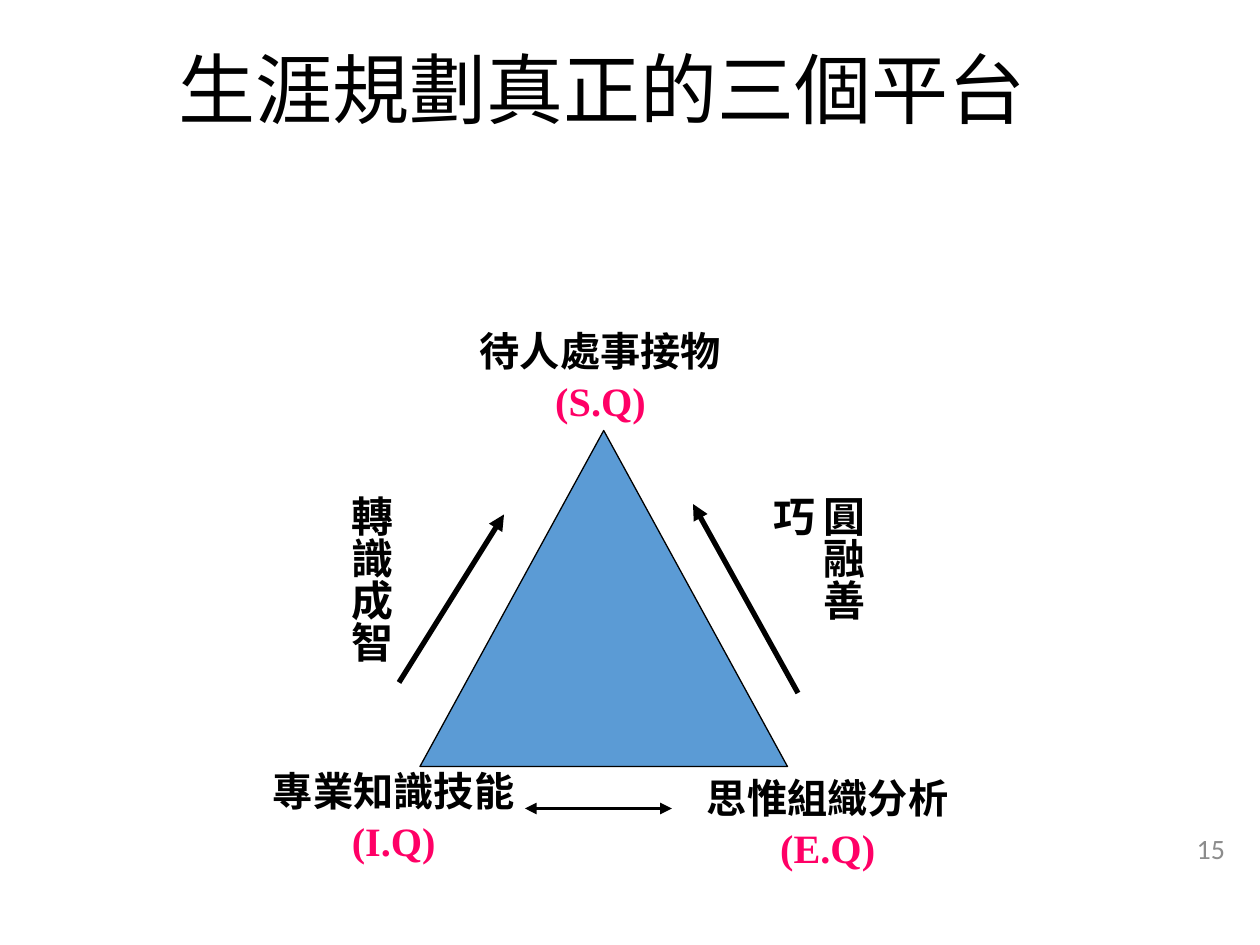
"""Build the slide showing the three platforms of career planning as a triangle."""
from dataclasses import dataclass
from typing import NamedTuple

from lxml.etree import SubElement
from pptx import Presentation
from pptx.dml.color import RGBColor
from pptx.enum.shapes import MSO_CONNECTOR as CONN, MSO_SHAPE as SHAPE
from pptx.enum.text import MSO_ANCHOR as ANCHOR, MSO_AUTO_SIZE as FIT, PP_ALIGN as ALIGN
from pptx.oxml.ns import qn
from pptx.util import Inches, Pt


@dataclass(frozen=True)
class Theme:
    black: RGBColor = RGBColor(0x00, 0x00, 0x00)
    pink: RGBColor = RGBColor(0xFF, 0x00, 0x66)
    blue: RGBColor = RGBColor(0x5B, 0x9B, 0xD5)
    gray: RGBColor = RGBColor(0x8C, 0x8C, 0x8C)
    title: Pt = Pt(44)
    corner: Pt = Pt(23)
    side: Pt = Pt(24)
    number: Pt = Pt(16)
    gap: Pt = Pt(12)


class Box(NamedTuple):
    col: float
    row: float
    cols: float
    rows: float


class Line(NamedTuple):
    text: str
    color: RGBColor


class Corner(NamedTuple):
    box: Box
    skill: str
    quotient: str


class Side(NamedTuple):
    box: Box
    text: str


class Arrow(NamedTuple):
    start: tuple
    end: tuple
    width: float
    heads: tuple


THEME = Theme()
COLS, ROWS = 120, 90
WIDTH, HEIGHT = Inches(10), Inches(7.5)
SERIF, SANS, NUMERAL = "Times New Roman", "Noto Sans CJK SC", "Calibri"

CORNERS = [
    Corner(Box(43.2, 32.16, 28, 9.12), "待人處事接物", "(S.Q)"),
    Corner(Box(24, 74, 27, 9.12), "專業知識技能", "(I.Q)"),
    Corner(Box(63.84, 74.64, 30, 9.12), "思惟組織分析", "(E.Q)"),
]
SIDES = [
    Side(Box(31, 46, 7.32, 20), "轉識成智"),
    Side(Box(76, 46, 7.32, 18), "圓融善巧"),
]
ARROWS = [
    Arrow((50, 77), (64, 77), 2.25, ("headEnd", "tailEnd")),
    Arrow((38, 65), (48, 49), 3, ("tailEnd",)),
    Arrow((66, 48), (76, 66), 3, ("headEnd",)),
]


def x(col: float) -> int:
    """Turn grid columns into a length."""
    return round(WIDTH * col / COLS)


def y(row: float) -> int:
    """Turn grid rows into a length."""
    return round(HEIGHT * row / ROWS)


def place(box: Box) -> tuple:
    """Turn a grid box into left, top, width and height."""
    return x(box.col), y(box.row), x(box.cols), y(box.rows)


def apply(target, formats: dict) -> None:
    """Set each named attribute of the target."""
    for name, value in formats.items():
        setattr(target, name, value)


def add_text(slide, box: Box, lines: list, font: dict, para: dict, frame: dict):
    """Add a text box with one paragraph per line and return its frame."""
    tf = slide.shapes.add_textbox(*place(box)).text_frame
    apply(tf, {"word_wrap": True, **frame})
    for i, line in enumerate(lines):
        p = tf.add_paragraph() if i else tf.paragraphs[0]
        apply(p, para)
        if i:
            p.space_before = THEME.gap
        r = p.add_run()
        r.text = line.text
        apply(r.font, font)
        r.font.color.rgb = line.color
        if font["name"] == SANS:
            SubElement(r._r.get_or_add_rPr(), qn("a:ea"), typeface=SANS)
    return tf


def add_corner(slide, corner: Corner) -> None:
    """Add the skill and quotient at one corner of the triangle."""
    lines = [Line(corner.skill, THEME.black), Line(corner.quotient, THEME.pink)]
    add_text(slide, corner.box, lines,
             {"name": SERIF, "size": THEME.corner, "bold": True},
             {"alignment": ALIGN.CENTER, "line_spacing": 0.6},
             {"auto_size": FIT.SHAPE_TO_FIT_TEXT})


def add_side(slide, side: Side) -> None:
    """Add the vertical words along one side of the triangle."""
    tf = add_text(slide, side.box, [Line(side.text, THEME.black)],
                  {"name": SERIF, "size": THEME.side, "bold": True},
                  {}, {"auto_size": FIT.SHAPE_TO_FIT_TEXT})
    tf._txBody.bodyPr.set("vert", "eaVert")


def add_arrow(slide, arrow: Arrow) -> None:
    """Add a straight arrow with heads at the named ends."""
    (c1, r1), (c2, r2) = arrow.start, arrow.end
    s = slide.shapes.add_connector(CONN.STRAIGHT, x(c1), y(r1), x(c2), y(r2))
    s.line.color.rgb = THEME.black
    s.line.width = Pt(arrow.width)
    ln = s.line._get_or_add_ln()
    for head in arrow.heads:
        SubElement(ln, qn(f"a:{head}"), type="triangle")
    SubElement(s._element.spPr, qn("a:effectLst"))


def add_triangle(slide, box: Box) -> None:
    """Add the central triangle."""
    s = slide.shapes.add_shape(SHAPE.ISOSCELES_TRIANGLE, *place(box))
    s.shadow.inherit = False
    s.fill.solid()
    s.fill.fore_color.rgb = THEME.blue
    s.line.color.rgb = THEME.black
    s.line.width = Pt(0.75)


def main() -> None:
    """Build and save the slide."""
    prs = Presentation()
    apply(prs, {"slide_width": WIDTH, "slide_height": HEIGHT})
    slide = prs.slides.add_slide(prs.slide_layouts[6])
    middle = {"vertical_anchor": ANCHOR.MIDDLE}
    add_text(slide, Box(90.84, 78.36, 27, 4.8), [Line("15", THEME.gray)],
             {"name": NUMERAL, "size": THEME.number}, {"alignment": ALIGN.RIGHT}, middle)
    add_text(slide, Box(14.4, 3.36, 85.92, 11.16), [Line("生涯規劃真正的三個平台", THEME.black)],
             {"name": SANS, "size": THEME.title},
             {"alignment": ALIGN.CENTER, "line_spacing": 0.9}, middle)
    add_triangle(slide, Box(40, 41, 35, 32))
    for corner in CORNERS:
        add_corner(slide, corner)
    for arrow in ARROWS:
        add_arrow(slide, arrow)
    for side in SIDES:
        add_side(slide, side)
    prs.save("out.pptx")


if __name__ == "__main__":
    main()
